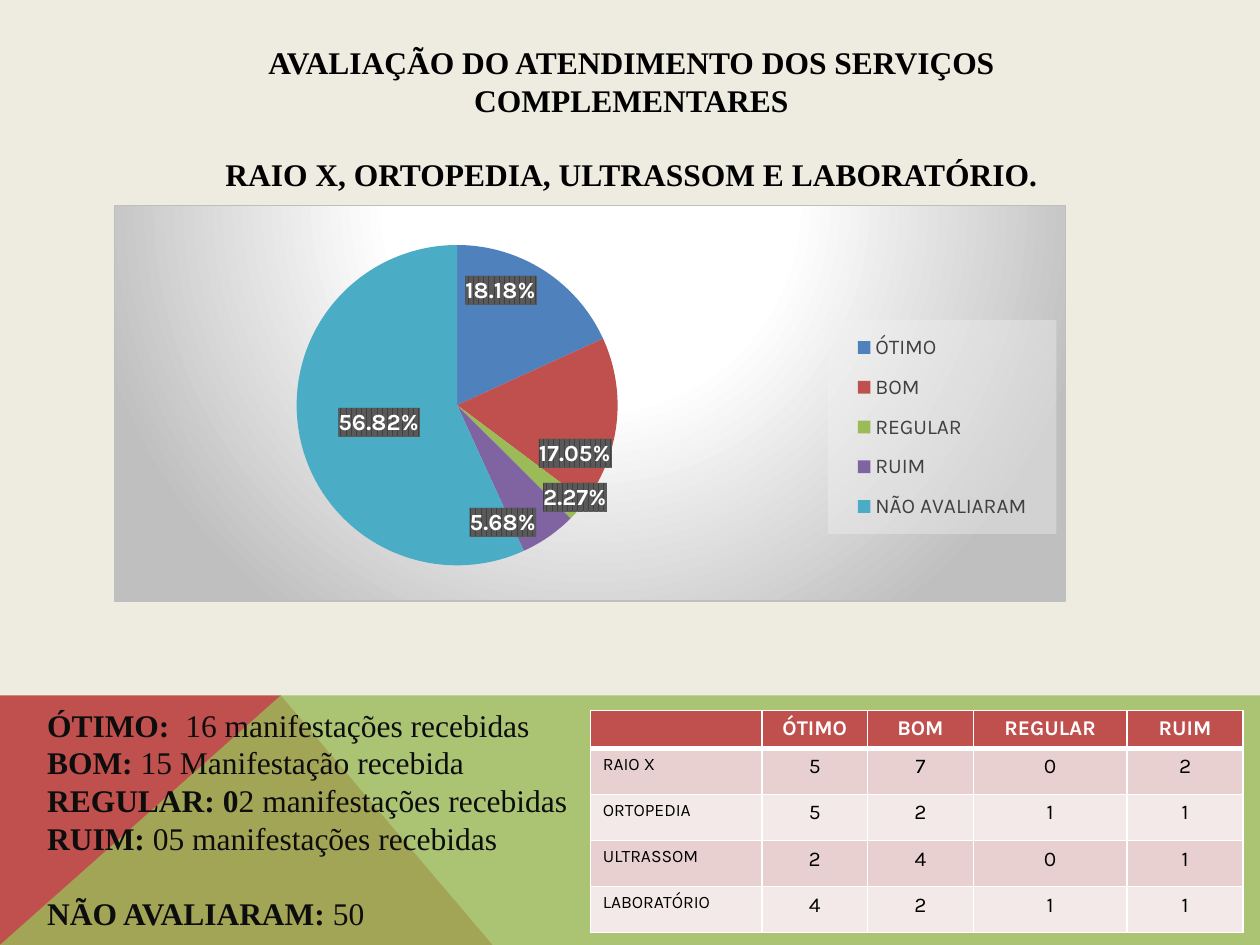
from copy import deepcopy
from dataclasses import dataclass

from lxml import etree
from pptx import Presentation
from pptx.chart.data import CategoryChartData
from pptx.dml.color import RGBColor
from pptx.enum.chart import XL_CHART_TYPE, XL_LABEL_POSITION, XL_LEGEND_POSITION
from pptx.enum.text import MSO_ANCHOR, PP_ALIGN
from pptx.oxml import parse_xml
from pptx.oxml.ns import nsdecls, qn
from pptx.util import Cm, Pt

PIE = XL_CHART_TYPE.PIE
LABEL_CENTER = XL_LABEL_POSITION.CENTER
LEGEND_RIGHT = XL_LEGEND_POSITION.RIGHT
CENTER, LEFT = PP_ALIGN.CENTER, PP_ALIGN.LEFT
MIDDLE = MSO_ANCHOR.MIDDLE


@dataclass(frozen=True)
class Theme:
    background: str = "EEECE1"
    red: str = "C0504D"
    green: str = "9BBB59"
    black: str = "000000"
    body: str = "0D0D0D"
    legend: str = "404040"
    legend_panel: str = "F2F2F2"
    label_stripes: tuple = ("595959", "404040")
    white: str = "FFFFFF"
    gray: str = "BFBFBF"
    bands: tuple = ("E8D0D0", "F4E9E9")
    slices: tuple = ("4F81BD", "C0504D", "9BBB59", "8064A2", "4BACC6")
    serif: str = "Times New Roman"
    sans: str = "Karla"
    text_size: float = 18
    label_size: float = 13.3
    cell_size: float = 12
    small_size: float = 10
    gap: float = 21


def apply(target, **values):
    for attribute, value in values.items():
        setattr(target, attribute, value)


def set_font(font, name, size, color, bold=False):
    apply(font, name=name, size=Pt(size), bold=bold)
    font.color.rgb = RGBColor.from_string(color)


def solid(fill, color):
    fill.solid()
    fill.fore_color.rgb = RGBColor.from_string(color)


def manual_layout(x, y, w=None, h=None, inner=False):
    """Chart part placed by fractions of the chart; without a size, an offset."""
    tags = [("layoutTarget", "inner")] if inner else []
    if w is not None:
        tags += [("xMode", "edge"), ("yMode", "edge")]
    tags += [("x", x), ("y", y)]
    if w is not None:
        tags += [("w", w), ("h", h)]
    body = "".join(f'<c:{tag} val="{value}"/>' for tag, value in tags)
    return parse_xml(f'<c:layout {nsdecls("c")}><c:manualLayout>{body}</c:manualLayout></c:layout>')


def shape_properties(body):
    return parse_xml(f'<c:spPr {nsdecls("c", "a")}>{body}</c:spPr>')


def srgb(color):
    return f'<a:srgbClr val="{color}"/>'


class SlideBuilder:
    def __init__(self, slide, theme):
        self.slide, self.theme = slide, theme
        solid(slide.background.fill, theme.background)

    def polygon(self, points, color, opacity=None):
        corners = [(Cm(x), Cm(y)) for x, y in points]
        builder = self.slide.shapes.build_freeform(*corners[0])
        builder.add_line_segments(corners[1:], close=True)
        area = builder.convert_to_shape()
        area.shadow.inherit = False
        area.line.fill.background()
        solid(area.fill, color)
        if opacity:
            tint = area.element.find(qn("p:spPr")).find(f'{qn("a:solidFill")}/{qn("a:srgbClr")}')
            etree.SubElement(tint, qn("a:alpha"), val=str(opacity * 1000))

    def paragraphs(self, frame, rows, color, alignment):
        """Each row lists (text, bold) runs; the last row stands apart."""
        for index, runs in enumerate(rows):
            paragraph = frame.paragraphs[0] if index == 0 else frame.add_paragraph()
            apply(paragraph, alignment=alignment, line_spacing=1.0)
            paragraph.space_before = Pt(self.theme.gap if index == len(rows) - 1 else 0)
            for text, bold in runs:
                run = paragraph.add_run()
                run.text = text
                set_font(run.font, self.theme.serif, self.theme.text_size, color, bold)

    def title(self, lines, left, top, width, height):
        title = self.slide.shapes.title
        apply(title, left=Cm(left), top=Cm(top), width=Cm(width), height=Cm(height))
        apply(title.text_frame, word_wrap=True, vertical_anchor=MIDDLE)
        self.paragraphs(title.text_frame, [[(line, True)] for line in lines],
                        self.theme.black, CENTER)

    def text(self, rows, left, top, width, height):
        box = self.slide.shapes.add_textbox(Cm(left), Cm(top), Cm(width), Cm(height))
        box.text_frame.word_wrap = True
        self.paragraphs(box.text_frame, rows, self.theme.body, LEFT)

    def pie(self, ratings, offsets, left, top, width, height):
        theme = self.theme
        data = CategoryChartData()
        data.categories = list(ratings)
        data.add_series("Series 1", list(ratings.values()))
        chart = self.slide.shapes.add_chart(
            PIE, Cm(left), Cm(top), Cm(width), Cm(height), data).chart
        apply(chart, has_title=False, has_legend=True)
        set_font(chart.font, theme.sans, theme.small_size, theme.black)
        plot = chart.plots[0]
        apply(plot, vary_by_categories=True, has_data_labels=True)
        for index, color in enumerate(theme.slices):
            solid(plot.series[0].points[index].format.fill, color)

        # Chart area: soft round gradient with a thin border
        stops = "".join(f'<a:gs pos="{place}">{srgb(color)}</a:gs>' for place, color in
                        [(0, theme.white), (39000, theme.white), (100000, theme.gray)])
        chart.element.find(qn("c:chart")).addnext(shape_properties(
            f'<a:gradFill><a:gsLst>{stops}</a:gsLst><a:path path="circle">'
            '<a:fillToRect l="50000" t="-80000" r="50000" b="180000"/></a:path></a:gradFill>'
            f'<a:ln w="9525"><a:solidFill>{srgb(theme.gray)}</a:solidFill></a:ln>'))
        plot_area = chart.element.find(f'{qn("c:chart")}/{qn("c:plotArea")}')
        for old in plot_area.findall(qn("c:layout")):
            plot_area.remove(old)
        plot_area.insert(0, manual_layout(0.19, 0.1, 0.34, 0.81, inner=True))

        # Legend on a translucent panel
        legend = chart.legend
        apply(legend, position=LEGEND_RIGHT, include_in_layout=False)
        set_font(legend.font, theme.sans, theme.cell_size, theme.legend)
        legend_xml = chart.element.find(f'{qn("c:chart")}/{qn("c:legend")}')
        for old in legend_xml.findall(qn("c:layout")):
            legend_xml.remove(old)
        legend_xml.find(qn("c:legendPos")).addnext(manual_layout(0.75, 0.29, 0.24, 0.54))
        legend_xml.find(qn("c:txPr")).addprevious(shape_properties(
            f'<a:solidFill><a:srgbClr val="{theme.legend_panel}"><a:alpha val="39000"/>'
            '</a:srgbClr></a:solidFill>'))

        # Percent labels on a dark pattern, some moved off the slice centre
        labels = plot.series[0].data_labels
        apply(labels, show_percentage=True, show_value=False, number_format="0.00%",
              number_format_is_linked=False, position=LABEL_CENTER)
        set_font(labels.font, theme.sans, theme.label_size, theme.white, True)
        labels_xml = plot_area.find(f'.//{qn("c:ser")}/{qn("c:dLbls")}')
        front, back = theme.label_stripes
        labels_xml.find(qn("c:txPr")).addprevious(shape_properties(
            f'<a:pattFill prst="dkVert"><a:fgClr>{srgb(front)}</a:fgClr>'
            f'<a:bgClr>{srgb(back)}</a:bgClr></a:pattFill>'))
        shared = [part for part in labels_xml if part.tag != qn("c:showLeaderLines")]
        for index, offset in enumerate(offsets):
            label = parse_xml(f'<c:dLbl {nsdecls("c")}><c:idx val="{index}"/></c:dLbl>')
            label.append(manual_layout(*offset))
            label.extend(deepcopy(part) for part in shared)
            labels_xml.insert(index, label)

    def cell_borders(self, cell, top, bottom):
        properties = cell._tc.get_or_add_tcPr()
        for index, (side, points) in enumerate([("L", 1), ("R", 1), ("T", top), ("B", bottom)]):
            properties.insert(index, parse_xml(
                f'<a:ln{side} {nsdecls("a")} w="{Pt(points)}"><a:solidFill>'
                f'{srgb(self.theme.white)}</a:solidFill></a:ln{side}>'))

    def table(self, rows, left, top, widths, heights):
        theme = self.theme
        table = self.slide.shapes.add_table(
            len(rows), len(widths), Cm(left), Cm(top), Cm(sum(widths)), Cm(sum(heights))).table
        for column, width in zip(table.columns, widths):
            column.width = Cm(width)
        for r, (row, height) in enumerate(zip(rows, heights)):
            table.rows[r].height = Cm(height)
            header = r == 0
            for c, value in enumerate(row):
                cell = table.cell(r, c)
                solid(cell.fill, theme.red if header else theme.bands[(r - 1) % 2])
                self.cell_borders(cell, 3 if r == 1 else 1, 3 if header else 1)
                cell.text = str(value)
                paragraph = cell.text_frame.paragraphs[0]
                paragraph.alignment = CENTER if c else LEFT
                set_font(paragraph.font, theme.sans, theme.cell_size if c else theme.small_size,
                         theme.white if header else theme.black, header)


def main():
    deck = Presentation()
    apply(deck, slide_width=Cm(25.4), slide_height=Cm(19.05))
    page = SlideBuilder(deck.slides.add_slide(deck.slide_layouts[5]), Theme())

    # Coloured footer band
    bottom, band_top, peak = 19.05, 14.02, 5.66
    page.polygon([(0, bottom), (0, band_top), (peak, band_top), (9.93, bottom)], page.theme.red)
    page.polygon([(0, bottom), (peak, band_top), (25.4, band_top), (25.4, bottom)],
                 page.theme.green, opacity=80)

    page.title(["AVALIAÇÃO DO ATENDIMENTO DOS SERVIÇOS COMPLEMENTARES",
                "RAIO X, ORTOPEDIA, ULTRASSOM E LABORATÓRIO."], 2.29, 1.02, 20.88, 2.72)

    # Share of each rating
    ratings = {"ÓTIMO": 18.18, "BOM": 17.05, "REGULAR": 2.27, "RUIM": 5.68, "NÃO AVALIARAM": 56.82}
    offsets = [(0, -0.12), (0.04, 0.1), (0.06, 0.1), (0, 0.13)]
    page.pie(ratings, offsets, 2.3, 4.13, 19.2, 8)

    # Number of answers, kept whole above the slide's lower edge
    answers = [("ÓTIMO:  ", "16 manifestações recebidas"), ("BOM: ", "15 Manifestação recebida"),
               ("REGULAR: 0", "2 manifestações recebidas"), ("RUIM: ", "05 manifestações recebidas"),
               ("NÃO AVALIARAM: ", "50")]
    page.text([[(rating, True), (count, False)] for rating, count in answers],
              0.7, 14.1, 11.71, 4.85)

    # Answers by service
    services = [("", "ÓTIMO", "BOM", "REGULAR", "RUIM"), ("RAIO X", 5, 7, 0, 2),
                ("ORTOPEDIA", 5, 2, 1, 1), ("ULTRASSOM", 2, 4, 0, 1), ("LABORATÓRIO", 4, 2, 1, 1)]
    page.table(services, 11.9, 14.32, [3.46, 2.13, 2.13, 3.1, 2.34], [0.69] + [0.93] * 4)

    deck.save("out.pptx")


if __name__ == "__main__":
    main()
